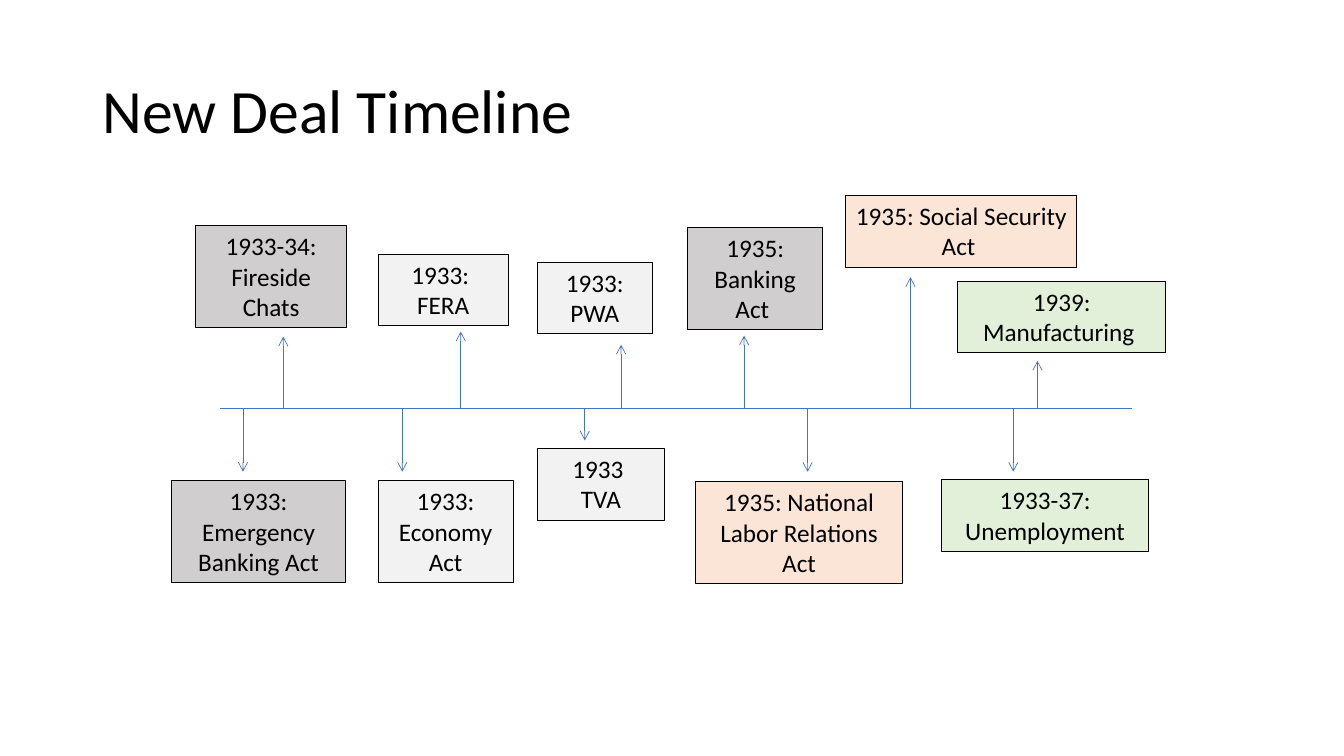
from dataclasses import dataclass
from typing import Any

import lxml.etree
import pptx
import pptx.dml.color
import pptx.enum.shapes
import pptx.enum.text
import pptx.oxml.ns
import pptx.util

PX = 9144  # EMU per px, 100 px to the inch
AXIS_Y = 405
BLACK, BLUE = "000000", "4472C4"
GREY, PALE, PEACH, GREEN = "D0CECE", "F2F2F2", "FBE5D6", "E2F0D9"
SHORT, TALL = 71, 101  # box heights for two and three lines of text


@dataclass
class Event:
    text: str
    left: int
    top: int
    width: int
    height: int
    fill: str
    arrow_x: int
    arrow_tip: int


EVENTS = [
    Event("1933: Emergency Banking Act", 170, 477, 173, TALL, GREY, 241, 468),
    Event("1933-34: Fireside Chats", 194, 224, 150, TALL, GREY, 281, 334),
    Event("1933: Economy Act", 375, 477, 134, TALL, PALE, 399, 468),
    Event("1933 \nTVA", 533, 445, 126, SHORT, PALE, 580, 437),
    Event("1933: \nFERA", 375, 252, 129, SHORT, PALE, 457, 329),
    Event("1933: PWA", 533, 260, 114, SHORT, PALE, 616, 342),
    Event("1935: Social Security Act ", 839, 194, 229, SHORT, PEACH, 903, 275),
    Event("1935: National Labor Relations Act", 690, 478, 205, TALL, PEACH, 801, 468),
    Event("1933-37: Unemployment", 934, 476, 205, SHORT, GREEN, 1005, 468),
    Event("1939: Manufacturing ", 950, 279, 206, SHORT, GREEN, 1029, 358),
    Event("1935:\nBanking Act ", 682, 226, 134, TALL, GREY, 738, 333),
]


def px(*lengths: int) -> list[pptx.util.Emu]:
    return [pptx.util.Emu(length * PX) for length in lengths]


def color(value: str) -> pptx.dml.color.RGBColor:
    return pptx.dml.color.RGBColor.from_string(value)


def set_all(target: Any, values: dict[str, Any]) -> None:
    for name, value in values.items():
        setattr(target, name, value)


def format_text(frame: Any, size: int, frame_format: dict[str, Any],
                para_format: dict[str, Any]) -> None:
    set_all(frame, {"word_wrap": True, **frame_format})
    for para in frame.paragraphs:
        set_all(para, para_format)
        for span in para.runs:
            set_all(span.font, {"name": "Calibri", "size": pptx.util.Pt(size)})
            span.font.color.rgb = color(BLACK)


def add_line(page: Any, start: tuple[int, int], end: tuple[int, int],
             arrow: bool = False) -> None:
    connector = page.shapes.add_connector(
        pptx.enum.shapes.MSO_CONNECTOR.STRAIGHT, *px(*start, *end))
    connector.line.color.rgb = color(BLUE)
    connector.line.width = pptx.util.Pt(0.5)
    qn = pptx.oxml.ns.qn
    properties = connector.element.spPr
    if arrow:
        lxml.etree.SubElement(properties.find(qn("a:ln")), qn("a:tailEnd"), type="arrow")
    lxml.etree.SubElement(properties, qn("a:effectLst"))


def add_event(page: Any, event: Event) -> None:
    add_line(page, (event.arrow_x, AXIS_Y), (event.arrow_x, event.arrow_tip), arrow=True)
    box = page.shapes.add_shape(
        pptx.enum.shapes.MSO_SHAPE.RECTANGLE,
        *px(event.left, event.top, event.width, event.height))
    box.shadow.inherit = False
    box.fill.solid()
    box.fill.fore_color.rgb = color(event.fill)
    box.line.color.rgb = color(BLACK)
    box.line.width = pptx.util.Pt(0.75)
    box.text_frame.text = event.text
    format_text(
        box.text_frame, 18,
        {"auto_size": pptx.enum.text.MSO_AUTO_SIZE.SHAPE_TO_FIT_TEXT,
         "vertical_anchor": pptx.enum.text.MSO_ANCHOR.TOP},
        {"alignment": pptx.enum.text.PP_ALIGN.CENTER})


def add_title(page: Any, text: str) -> None:
    title = page.shapes.title
    set_all(title, dict(zip(("left", "top", "width", "height"), px(92, 40, 1150, 145))))
    title.text_frame.text = text
    format_text(
        title.text_frame, 44,
        {"auto_size": pptx.enum.text.MSO_AUTO_SIZE.NONE,
         "vertical_anchor": pptx.enum.text.MSO_ANCHOR.MIDDLE},
        {"alignment": pptx.enum.text.PP_ALIGN.LEFT, "line_spacing": 0.9})


def main() -> None:
    deck = pptx.Presentation()
    deck.slide_width, deck.slide_height = px(1333, 750)
    page = deck.slides.add_slide(deck.slide_layouts.get_by_name("Title Only"))
    add_title(page, "New Deal Timeline")
    add_line(page, (218, AXIS_Y), (1123, AXIS_Y))
    for event in EVENTS:
        add_event(page, event)
    deck.save("out.pptx")


if __name__ == "__main__":
    main()
